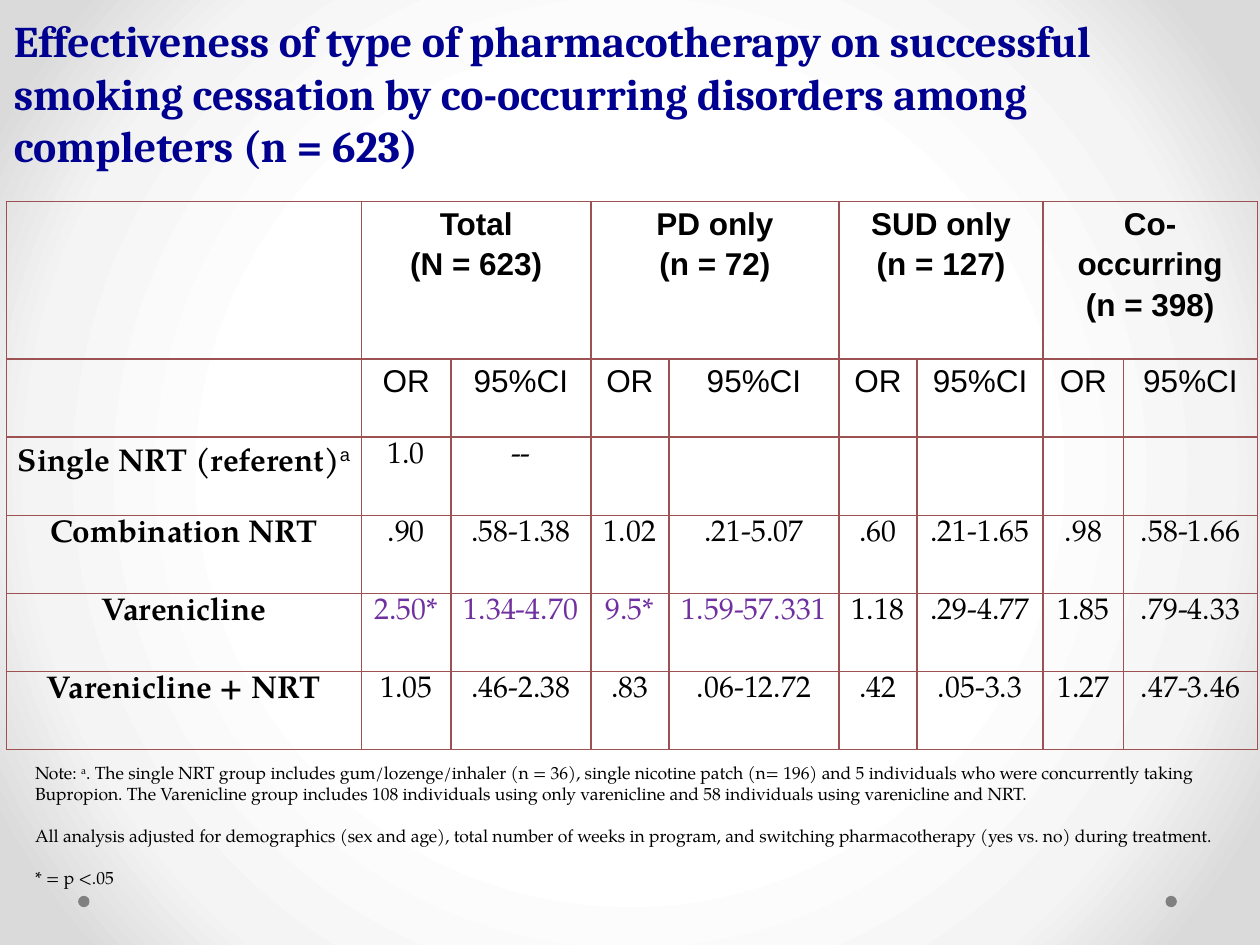
import lxml.etree
import pptx
import pptx.dml.color
import pptx.enum.shapes
import pptx.enum.text
import pptx.oxml
import pptx.oxml.ns
import pptx.util

Inches, Pt = pptx.util.Inches, pptx.util.Pt
Align, Anchor = pptx.enum.text.PP_ALIGN, pptx.enum.text.MSO_ANCHOR
COLORS = {"text": "000000", "title": "000090", "accent": "7030A0", "border": "9C5252", "dot": "808080"}
BACKGROUND_STOPS = [(50, "FFFFFF"), (76, "F4F4F4"), (92, "DADADA")]
SANS, SERIF, HEADING = "Arial", "TeX Gyre Pagella", "Cambria"
COLUMN_WIDTHS = [2.82, 0.71, 1.11, 0.62, 1.35, 0.62, 1, 0.64, 1.06]
ROW_HEIGHTS = [1.25] + [0.62] * 5
GROUPS = [("Total", "(N = 623)"), ("PD only", "(n = 72)"), ("SUD only", "(n = 127)"), ("Co-occurring", "(n = 398)")]
RESULTS = [
    ["Single NRT (referent)", "1.0", "--"],
    ["Combination NRT", ".90", ".58-1.38", "1.02", ".21-5.07", ".60", ".21-1.65", ".98", ".58-1.66"],
    ["Varenicline", "2.50*", "1.34-4.70", "9.5*", "1.59-57.331", "1.18", ".29-4.77", "1.85", ".79-4.33"],
    ["Varenicline + NRT", "1.05", ".46-2.38", ".83", ".06-12.72", ".42", ".05-3.3", "1.27", ".47-3.46"],
]
SIGNIFICANT = {"2.50*", "1.34-4.70", "9.5*", "1.59-57.331"}
NOTES = [
    ["Note: ", "a", ". The single NRT group includes gum/lozenge/inhaler (n = 36), single nicotine patch (n= 196) "
     "and 5 individuals who were concurrently taking Bupropion. The Varenicline group includes 108 individuals "
     "using only varenicline and 58 individuals using varenicline and NRT."],
    ["All analysis adjusted for demographics (sex and age), total number of weeks in program, "
     "and switching pharmacotherapy (yes vs. no) during treatment."],
    ["* = p <.05"],
]


class SlideBuilder:
    """Holds the deck, its current slide and the styling shared by every element."""

    def __init__(self):
        self.deck = pptx.Presentation()
        self.deck.slide_width, self.deck.slide_height = Inches(10), Inches(7.5)
        self.page = self.deck.slides.add_slide(self.deck.slide_layouts[5])

    def apply(self, target, values):
        for name, value in values.items():
            setattr(target, name, value)

    def span(self, para, text, font, size, color="text", bold=False, superscript=False):
        span = para.add_run()
        span.text = text
        self.apply(span.font, {"name": font, "size": Pt(size), "bold": bold})
        span.font.color.rgb = pptx.dml.color.RGBColor.from_string(COLORS[color])
        if superscript:
            span.font._element.set("baseline", "30000")

    def background(self):
        fill = self.page.background.fill
        fill.gradient()
        gradient = self.page._element.find(".//" + pptx.oxml.ns.qn("a:gradFill"))
        stops = "".join(f'<a:gs pos="{position * 1000}"><a:srgbClr val="{color}"/></a:gs>'
                        for position, color in BACKGROUND_STOPS)
        gradient.getparent().replace(gradient, pptx.oxml.parse_xml(
            f'<a:gradFill {pptx.oxml.ns.nsdecls("a")} rotWithShape="1"><a:gsLst>{stops}</a:gsLst>'
            '<a:path path="circle"><a:fillToRect l="50000" t="50000" r="50000" b="50000"/></a:path></a:gradFill>'))

    def dot(self, left):
        dot = self.page.shapes.add_shape(pptx.enum.shapes.MSO_SHAPE.OVAL, Inches(left), Inches(7.11),
                                         Inches(0.09), Inches(0.09))
        dot.shadow.inherit = False
        dot.fill.solid()
        dot.fill.fore_color.rgb = pptx.dml.color.RGBColor.from_string(COLORS["dot"])
        dot.line.fill.background()

    def title(self, text):
        box = self.page.shapes.title
        self.apply(box, {"left": Inches(0.01), "top": Inches(0.33), "width": Inches(9.57), "height": Inches(1.08)})
        self.apply(box.text_frame, {"vertical_anchor": Anchor.BOTTOM, "word_wrap": True,
                                    "auto_size": pptx.enum.text.MSO_AUTO_SIZE.NONE})
        para = box.text_frame.paragraphs[0]
        para.alignment = Align.LEFT
        self.span(para, text, HEADING, 25, "title", True)

    def notes(self, paragraphs):
        box = self.page.shapes.add_textbox(Inches(0.18), Inches(6), Inches(9.67), Inches(1.31))
        box.text_frame.word_wrap = True
        for index, texts in enumerate(paragraphs):
            para = box.text_frame.add_paragraph() if index else box.text_frame.paragraphs[0]
            para.space_before = Pt(12 if index else 0)
            for text in texts:
                self.span(para, text, SERIF, 10, superscript=text == "a")

    def table(self):
        table = self.page.shapes.add_table(len(ROW_HEIGHTS), len(COLUMN_WIDTHS), Inches(0.05), Inches(1.6),
                                           Inches(sum(COLUMN_WIDTHS)), Inches(sum(ROW_HEIGHTS))).table
        self.apply(table, {"first_row": False, "horz_banding": False})
        for column, width in zip(table.columns, COLUMN_WIDTHS):
            column.width = Inches(width)
        for row, height in zip(table.rows, ROW_HEIGHTS):
            row.height = Inches(height)
        for cell in table.iter_cells():
            self.cell_frame(cell)
        return table

    def cell_frame(self, cell):
        self.apply(cell, {"margin_left": Inches(0.07), "margin_right": Inches(0.07),
                          "margin_top": 0, "margin_bottom": 0})
        cell.fill.background()
        for index, side in enumerate("LRTB"):
            cell._tc.get_or_add_tcPr().insert(index, pptx.oxml.parse_xml(
                f'<a:ln{side} {pptx.oxml.ns.nsdecls("a")} w="12700"><a:solidFill>'
                f'<a:srgbClr val="{COLORS["border"]}"/></a:solidFill></a:ln{side}>'))

    def cell_text(self, cell, lines, font, size, **style):
        for index, text in enumerate(lines):
            para = cell.text_frame.add_paragraph() if index else cell.text_frame.paragraphs[0]
            self.apply(para, {"alignment": Align.CENTER, "line_spacing": 1.15})
            self.span(para, text, font, size, **style)


def main():
    builder = SlideBuilder()
    builder.background()
    for left in (9.25, 0.62):
        builder.dot(left)
    table = builder.table()
    for index, lines in enumerate(GROUPS):
        column = 1 + 2 * index
        table.cell(0, column).merge(table.cell(0, column + 1))
        builder.cell_text(table.cell(0, column), lines, SANS, 18, bold=True)
        for offset, label in enumerate(("OR", "95%CI")):
            builder.cell_text(table.cell(1, column + offset), [label], SANS, 18)
    for row, (treatment, *values) in enumerate(RESULTS, 2):
        builder.cell_text(table.cell(row, 0), [treatment], SERIF, 18, bold=True)
        for column, value in enumerate(values, 1):
            color = "accent" if value in SIGNIFICANT else "text"
            builder.cell_text(table.cell(row, column), [value], SERIF, 17, color=color)
    builder.span(table.cell(2, 0).text_frame.paragraphs[0], "a", SANS, 18, superscript=True)
    builder.notes(NOTES)
    builder.title("Effectiveness of type of pharmacotherapy on successful smoking cessation "
                  "by co-occurring disorders among completers (n = 623)")
    builder.deck.save("out.pptx")


if __name__ == "__main__":
    main()
